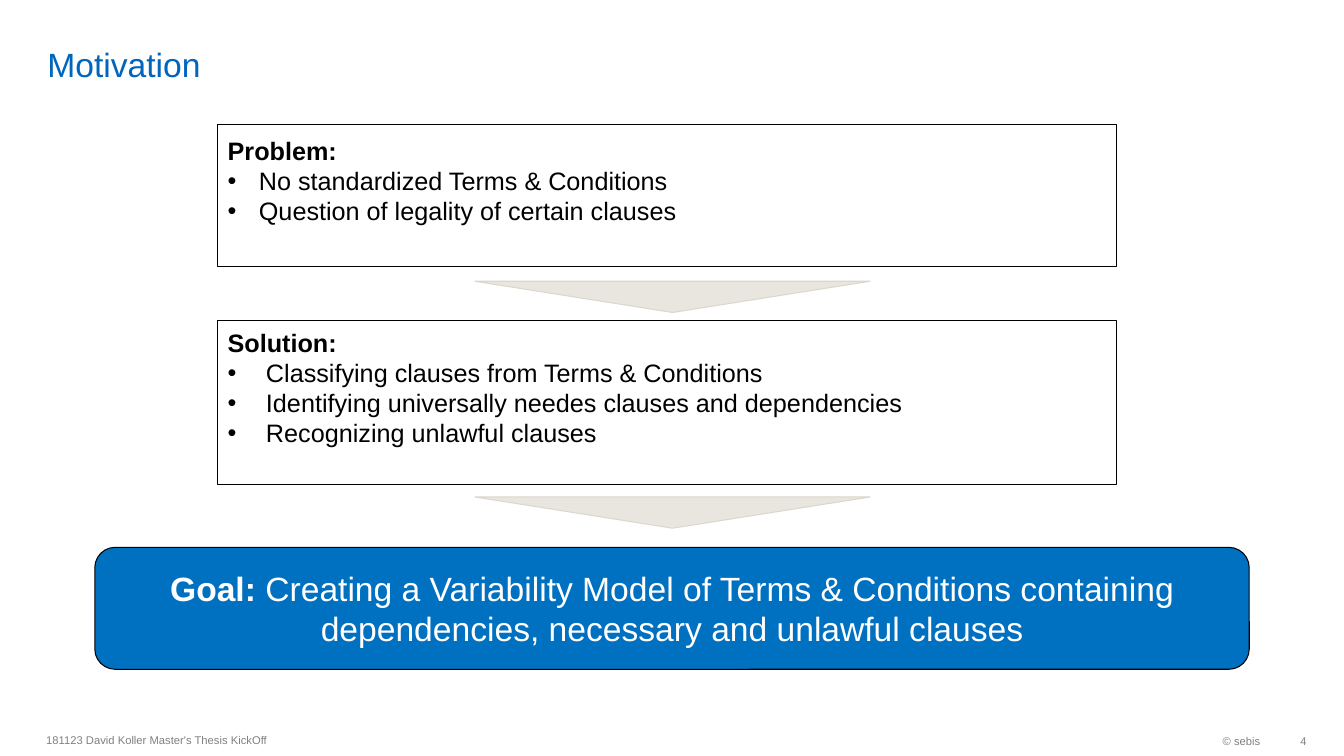
from pptx import Presentation, util as u
from pptx.dml.color import RGBColor
from pptx.enum import shapes, text
from lxml import etree

LEFT, MID, RIGHT = text.PP_ALIGN.LEFT, text.PP_ALIGN.CENTER, text.PP_ALIGN.RIGHT
KIND = shapes.MSO_SHAPE
NS = "{http://schemas.openxmlformats.org/drawingml/2006/main}"


def color(code):
    return RGBColor.from_string(code)


class Page:
    font = "Arial"

    def __init__(self, deck):
        self.slide = deck.slides.add_slide(deck.slide_layouts[5])

    def place(self, box):
        return [u.Inches(n) for n in box]

    def frame(self, shape, anchor=text.MSO_ANCHOR.MIDDLE, wrap=True, pad=(0.1, 0.05, 0.1, 0.05)):
        frame = shape.text_frame
        names = ("margin_left", "margin_top", "margin_right", "margin_bottom")
        style = dict(zip(names, self.place(pad)))
        style.update(word_wrap=wrap, auto_size=text.MSO_AUTO_SIZE.NONE, vertical_anchor=anchor)
        for key, val in style.items():
            setattr(frame, key, val)
        return frame

    def line(self, par, runs, size, ink, align=LEFT):
        par.alignment = align
        for words, bold in runs:
            run = par.add_run()
            run.text = words
            style = {"name": self.font, "size": u.Pt(size), "bold": bold}
            for key, val in style.items():
                setattr(run.font, key, val)
            run.font.color.rgb = color(ink)

    def title(self, words, box):
        shape = self.slide.shapes.title
        for key, val in zip(("left", "top", "width", "height"), self.place(box)):
            setattr(shape, key, val)
        frame = self.frame(shape, text.MSO_ANCHOR.BOTTOM, pad=(0.1, 0, 0.1, 0))
        self.line(frame.paragraphs[0], [(words, False)], 24, "0065BD")

    def label(self, words, box, align=LEFT, **opts):
        shape = self.slide.shapes.add_textbox(*self.place(box))
        frame = self.frame(shape, **opts)
        self.line(frame.paragraphs[0], [(words, False)], 8, "808080", align)

    def shape(self, kind, box, fill, edge="000000"):
        shape = self.slide.shapes.add_shape(kind, *self.place(box))
        shape.shadow.inherit = False
        if fill:
            shape.fill.solid()
            shape.fill.fore_color.rgb = color(fill)
        else:
            shape.fill.background()
        shape.line.color.rgb = color(edge)
        shape.line.width = u.Pt(0.75)
        return shape

    def bullet(self, par, dent):
        props = par._p.get_or_add_pPr()
        props.set("marL", str(u.Inches(dent)))
        props.set("indent", str(-u.Inches(dent)))
        etree.SubElement(props, NS + "buFont", typeface=self.font)
        etree.SubElement(props, NS + "buChar", char="•")

    def panel(self, head, items, box, dent, fill=None):
        shape = self.shape(KIND.RECTANGLE, box, fill)
        frame = self.frame(shape, pad=(0.1, 0.05, 0.1, 0.35))
        self.line(frame.paragraphs[0], [(head, True)], 18, "000000")
        for item in items:
            par = frame.add_paragraph()
            self.bullet(par, dent)
            self.line(par, [(item, False)], 18, "000000")

    def arrow(self, top):
        shape = self.shape(KIND.ISOSCELES_TRIANGLE, (4.71, top, 3.92, 0.31), "E8E6DF", "DAD7CB")
        shape.rotation = 180

    def goal(self, runs, box):
        frame = self.frame(self.shape(KIND.ROUNDED_RECTANGLE, box, "0070C0"))
        self.line(frame.paragraphs[0], runs, 24, "FFFFFF", MID)


def main():
    deck = Presentation()
    deck.slide_width, deck.slide_height = u.Inches(13.33), u.Inches(7.5)
    page = Page(deck)
    page.title("Motivation", (0.37, 0.05, 11.58, 0.79))
    page.label("© sebis", (10.26, 7.19, 2.34, 0.32), RIGHT, wrap=False)
    page.label("4", (12.6, 7.19, 0.36, 0.32), RIGHT, wrap=False, pad=(0.1, 0.05, 0, 0.05))
    page.goal([
        ("Goal: ", True),
        ("Creating a Variability Model of Terms & Conditions containing "
         "dependencies, necessary and unlawful clauses", False),
    ], (0.94, 5.43, 11.45, 1.21))
    page.panel("Solution:", [
        "Classifying clauses from Terms & Conditions",
        "Identifying universally needes clauses and dependencies",
        "Recognizing unlawful clauses",
    ], (2.16, 3.18, 8.91, 1.63), 0.38)
    page.panel("Problem:", [
        "No standardized Terms & Conditions",
        "Question of legality of certain clauses",
    ], (2.16, 1.24, 8.91, 1.4), 0.31, "FFFFFF")
    for top in (2.79, 4.93):
        page.arrow(top)
    page.label("181123 David Koller Master's Thesis KickOff", (0.36, 7.18, 6.3, 0.32))
    deck.save("out.pptx")


if __name__ == "__main__":
    main()
